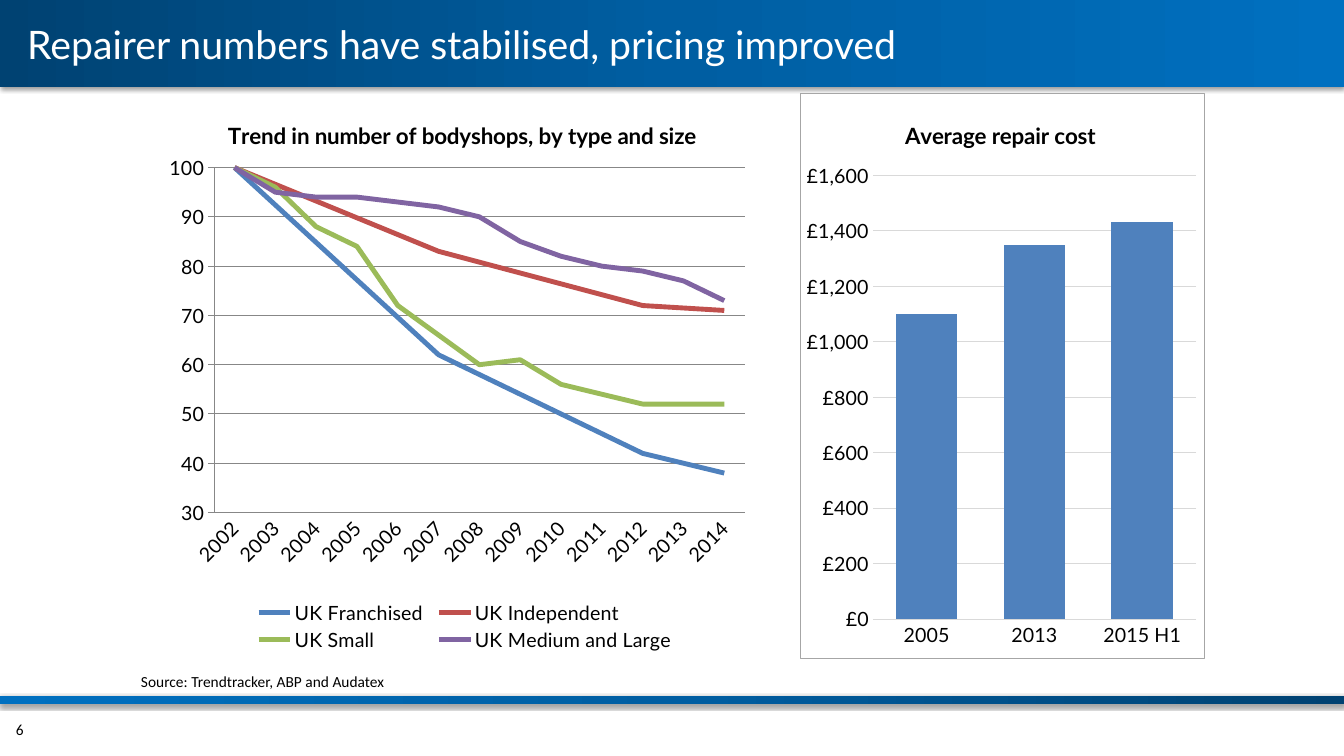
from copy import deepcopy

from lxml import etree
from pptx import Presentation
from pptx import util as u
from pptx.chart import data as chart_data
from pptx.dml.color import RGBColor
from pptx.enum import chart as ch, shapes, text
from pptx.oxml import ns

COLOURS = {
    "navy": "004272", "mid": "005EA2", "bright": "0070C0",
    "white": "FFFFFF", "black": "000000",
    "axis": "878787", "grid": "D9D9D9", "border": "A6A6A6",
    "blue": "4F81BD", "red": "C0504D", "green": "9BBB59", "purple": "8064A2",
}


def colour(name):
    return RGBColor.from_string(COLOURS[name])


def add_xml(parent, tag, index=None, **attributes):
    element = etree.Element(ns.qn(tag), {k: str(v) for k, v in attributes.items()})
    parent.insert(len(parent) if index is None else index, element)
    return element


def apply(target, values):
    for name, value in values.items():
        setattr(target, name, value)


class SlideBuilder:
    heading_font = "Lato"
    small_font = "Calibri"

    def __init__(self, page):
        self.page = page

    def font(self, font, size, shade="black", face=None, bold=False):
        apply(font, {"name": face or self.heading_font, "size": u.Pt(size), "bold": bold})
        font.color.rgb = colour(shade)

    def line(self, line, shade, width=0.75):
        line.color.rgb = colour(shade)
        line.width = u.Pt(width)

    def place(self, shape, area):
        names = ("left", "top", "width", "height")
        apply(shape, dict(zip(names, map(u.Inches, area))))

    def bar(self, area, angle):
        bar = self.page.shapes.add_shape(shapes.MSO_SHAPE.RECTANGLE, *map(u.Inches, area))
        bar.line.fill.background()
        bar.fill.gradient()
        bar.fill.gradient_angle = angle
        stops = bar._element.spPr.find(".//" + ns.qn("a:gsLst"))
        stops.insert(1, deepcopy(stops[0]))
        for stop, position, shade in zip(bar.fill.gradient_stops, (0, 0.5, 1),
                                         ("navy", "mid", "bright")):
            stop.color.rgb = colour(shade)
            stop.position = position
        # Soft shadow below the bar
        bar.shadow.inherit = False
        effects = bar._element.spPr.find(ns.qn("a:effectLst"))
        shadow = add_xml(effects, "a:outerShdw", blurRad=u.Pt(3.1), dist=u.Pt(1.6),
                         dir=5400000, algn="t", rotWithShape=0)
        shade = add_xml(shadow, "a:srgbClr", val=COLOURS["black"])
        add_xml(shade, "a:alpha", val=38000)

    def title(self, words, area):
        title = self.page.shapes.title
        tree = self.page.shapes._spTree
        tree.remove(title._element)
        tree.append(title._element)
        self.place(title, area)
        self.set_words(title.text_frame, words, 28, "white", self.heading_font)

    def label(self, words, area, wrap=True):
        box = self.page.shapes.add_textbox(*map(u.Inches, area))
        self.set_words(box.text_frame, words, 11, "black", self.small_font, wrap)

    def set_words(self, frame, words, size, shade, face, wrap=True):
        apply(frame, {"word_wrap": wrap, "auto_size": text.MSO_AUTO_SIZE.NONE,
                      "vertical_anchor": text.MSO_ANCHOR.MIDDLE})
        para = frame.paragraphs[0]
        para.alignment = text.PP_ALIGN.LEFT
        span = para.add_run()
        span.text = words
        self.font(span.font, size, shade, face)

    def layout(self, parent, index, inner=False, **fractions):
        old = parent.find(ns.qn("c:layout"))
        if old is not None:
            parent.remove(old)
        manual = add_xml(add_xml(parent, "c:layout", index), "c:manualLayout")
        if inner:
            add_xml(manual, "c:layoutTarget", val="inner")
        for side in "xy":
            add_xml(manual, f"c:{side}Mode", val="edge")
        for side, value in fractions.items():
            add_xml(manual, f"c:{side}", val=value)

    def chart(self, kind, area, heading, heading_at, plot_at, categories, series, grid):
        data = chart_data.CategoryChartData()
        data.categories = categories
        for name, values, _ in series:
            data.add_series(name, values)
        chart = self.page.shapes.add_chart(kind, *map(u.Inches, area), data).chart
        self.font(chart.font, 14)
        chart.has_legend = False
        chart.has_title = True
        frame = chart.chart_title.text_frame
        frame.text = heading
        self.font(frame.paragraphs[0].runs[0].font, 16, bold=True)
        self.layout(chart.chart_title._element, 1, **dict(zip("xy", heading_at)))
        plot_area = chart._chartSpace.chart.plotArea
        self.layout(plot_area, 0, inner=True, **dict(zip("xywh", plot_at)))
        chart.plots[0].vary_by_categories = False
        for axis in (chart.category_axis, chart.value_axis):
            apply(axis, {"major_tick_mark": ch.XL_TICK_MARK.NONE,
                         "minor_tick_mark": ch.XL_TICK_MARK.NONE})
            self.font(axis.tick_labels.font, 14)
            self.line(axis.format.line, grid)
        chart.value_axis.has_major_gridlines = True
        self.line(chart.value_axis.major_gridlines.format.line, grid)
        return chart

    def scale(self, axis, low, high, step, number_format):
        apply(axis, {"minimum_scale": low, "maximum_scale": high, "major_unit": step})
        apply(axis.tick_labels, {"number_format": number_format,
                                 "number_format_is_linked": False})

    def line_chart(self, area, heading, categories, series):
        chart = self.chart(ch.XL_CHART_TYPE.LINE, area, heading, (0.13, 0.04),
                           (0.115, 0.132, 0.825, 0.608), categories, series, "axis")
        self.scale(chart.value_axis, 30, 100, 10, "0")
        chart.value_axis.major_tick_mark = ch.XL_TICK_MARK.OUTSIDE
        chart.category_axis._element.find(".//" + ns.qn("a:bodyPr")).set("rot", "-2700000")
        for line, (_, _, shade) in zip(chart.plots[0].series, series):
            line.smooth = False
            line.marker.style = ch.XL_MARKER_STYLE.NONE
            self.line(line.format.line, shade, 3.5)
        # Join the points across missing years
        chart._chartSpace.chart.find(ns.qn("c:dispBlanksAs")).set("val", "span")
        chart.has_legend = True
        apply(chart.legend, {"position": ch.XL_LEGEND_POSITION.BOTTOM,
                             "include_in_layout": False})
        self.font(chart.legend.font, 14)
        self.layout(chart.legend._element, 1, x=0.17, y=0.89, w=0.67, h=0.1)

    def column_chart(self, area, heading, categories, series):
        chart = self.chart(ch.XL_CHART_TYPE.COLUMN_CLUSTERED, area, heading, (0.25, 0.04),
                           (0.18, 0.145, 0.8, 0.785), categories, series, "grid")
        self.scale(chart.value_axis, 0, 1600, 200, '"£"#,##0')
        chart.value_axis.format.line.fill.background()
        apply(chart.plots[0], {"gap_width": 75, "overlap": -26})
        for columns, (_, _, shade) in zip(chart.plots[0].series, series):
            columns.format.fill.solid()
            columns.format.fill.fore_color.rgb = colour(shade)
        # Frame around the chart
        space = chart._chartSpace
        frame = add_xml(space, "c:spPr", space.index(space.chart) + 1)
        outline = add_xml(frame, "a:ln", w=u.Pt(0.75))
        add_xml(add_xml(outline, "a:solidFill"), "a:srgbClr", val=COLOURS["border"])


def main():
    deck = Presentation()
    deck.slide_width, deck.slide_height = u.Inches(13.33), u.Inches(7.5)
    slide = SlideBuilder(deck.slides.add_slide(deck.slide_layouts[5]))

    # Header and footer bars
    slide.bar((0, 0, 13.33, 0.86), 0)
    slide.bar((0, 6.9, 13.33, 0.08), 180)
    slide.title("Repairer numbers have stabilised, pricing improved", (0.17, 0, 12.99, 0.86))
    slide.label("6", (0.06, 7.09, 0.79, 0.3))
    slide.label("Source: Trendtracker, ABP and Audatex", (1.3, 6.61, 2.67, 0.29), wrap=False)

    # Bodyshop trend, 2002 = 100
    gap = [None] * 4
    slide.line_chart(
        (1.39, 0.92, 6.38, 5.63), "Trend in number of bodyshops, by type and size",
        [str(year) for year in range(2002, 2015)],
        [("UK Franchised", [100, *gap, 62, *gap, 42, None, 38], "blue"),
         ("UK Independent", [100, *gap, 83, *gap, 72, None, 71], "red"),
         ("UK Small", [100, 96, 88, 84, 72, 66, 60, 61, 56, 54, 52, 52, 52], "green"),
         ("UK Medium and Large",
          [100, 95, 94, 94, 93, 92, 90, 85, 82, 80, 79, 77, 73], "purple")])

    # Repair cost
    cost = "Average repair cost"
    slide.column_chart((7.93, 0.92, 4.02, 5.62), cost, ["2005", "2013", "2015 H1"],
                       [(cost, [1100, 1350, 1430], "blue")])
    deck.save("out.pptx")


if __name__ == "__main__":
    main()
